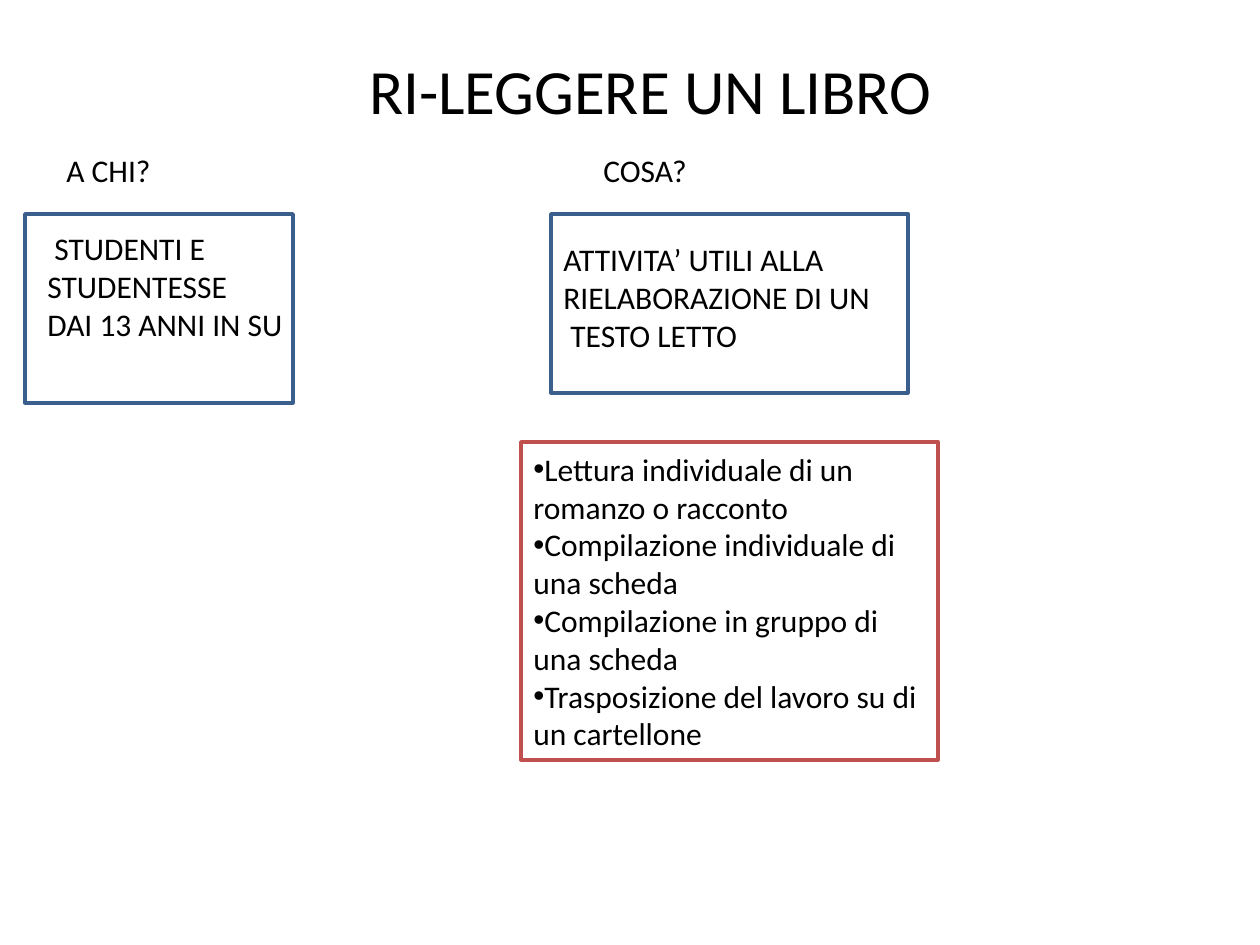
"""Build the slide on re-reading a book: for whom and what."""
from lxml import etree
from pptx import Presentation
from pptx.dml.color import RGBColor
from pptx.enum.shapes import MSO_SHAPE
from pptx.enum.text import MSO_ANCHOR, PP_ALIGN
from pptx.oxml.ns import qn
from pptx.util import Emu, Pt

RECTANGLE = MSO_SHAPE.RECTANGLE
TOP, MIDDLE = MSO_ANCHOR.TOP, MSO_ANCHOR.MIDDLE
LEFT, CENTER = PP_ALIGN.LEFT, PP_ALIGN.CENTER

EMU_PER_PX = 914400 / 126
SLIDE_SIZE = (1260, 945)
FONT, BLACK, WHITE, BLUE, RED = "Calibri", "000000", "FFFFFF", "3A5F8C", "C0504D"
BODY_SIZE, TITLE_SIZE = 18, 36
SPACE_INDENT = 7

TITLE = ("RI-LEGGERE UN LIBRO", (95, 45, 1111, 89))
HEADINGS = [
    ("A CHI?", (54, 145, 228, 50)),
    ("COSA?", (591, 145, 287, 50)),
]
# Each line pairs its text with its first-line indent.
ANSWERS = [
    ([("STUDENTI E STUDENTESSE", SPACE_INDENT), ("DAI 13 ANNI IN SU", 0)],
     (35, 223, 277, 127)),
    ([("ATTIVITA’ UTILI ALLA RIELABORAZIONE DI UN", 0), ("TESTO LETTO", SPACE_INDENT)],
     (551, 234, 417, 127)),
]
FRAMES = [(25, 214, 268, 189), (551, 214, 357, 179)]
ACTIVITIES = [
    "Lettura individuale di un romanzo o racconto",
    "Compilazione individuale di una scheda",
    "Compilazione in gruppo di una scheda",
    "Trasposizione del lavoro su di un cartellone",
]
ACTIVITIES_BOX = (521, 442, 417, 318)


def px(length):
    return Emu(round(length * EMU_PER_PX))


def color(value):
    return RGBColor.from_string(value)


def write(shape, lines, size=BODY_SIZE, align=LEFT, anchor=TOP, bullet=None):
    frame = shape.text_frame
    frame.word_wrap = True
    frame.vertical_anchor = anchor
    for index, (text, indent) in enumerate(lines):
        paragraph = frame.add_paragraph() if index else frame.paragraphs[0]
        paragraph.text = text
        paragraph.alignment = align
        properties = paragraph._p.get_or_add_pPr()
        properties.set("marL", "0")
        properties.set("indent", str(px(indent)))
        if bullet:
            etree.SubElement(properties, qn("a:buFont")).set("typeface", "Arial")
            etree.SubElement(properties, qn("a:buChar")).set("char", bullet)
        paragraph.font.name = FONT
        paragraph.font.size = Pt(size)
        paragraph.font.color.rgb = color(BLACK)


def add_text(slide, box, lines, **style):
    write(slide.shapes.add_textbox(*map(px, box)), lines, **style)


def add_frame(slide, box, line, fill=None):
    shape = slide.shapes.add_shape(RECTANGLE, *map(px, box))
    shape.shadow.inherit = False
    shape.line.color.rgb = color(line)
    shape.line.width = Pt(2)
    if fill:
        shape.fill.solid()
        shape.fill.fore_color.rgb = color(fill)
    else:
        shape.fill.background()
    return shape


def main():
    presentation = Presentation()
    presentation.slide_width, presentation.slide_height = map(px, SLIDE_SIZE)
    slide = presentation.slides.add_slide(presentation.slide_layouts[6])
    title, title_box = TITLE
    add_text(slide, title_box, [(title, 0)], size=TITLE_SIZE, align=CENTER)
    for heading, box in HEADINGS:
        add_text(slide, box, [(heading, 0)])
    activities = add_frame(slide, ACTIVITIES_BOX, RED, WHITE)
    write(activities, [(text, 0) for text in ACTIVITIES], anchor=MIDDLE, bullet="•")
    for lines, box in ANSWERS:
        add_text(slide, box, lines)
    for box in FRAMES:
        add_frame(slide, box, BLUE)
    presentation.save("out.pptx")


if __name__ == "__main__":
    main()
